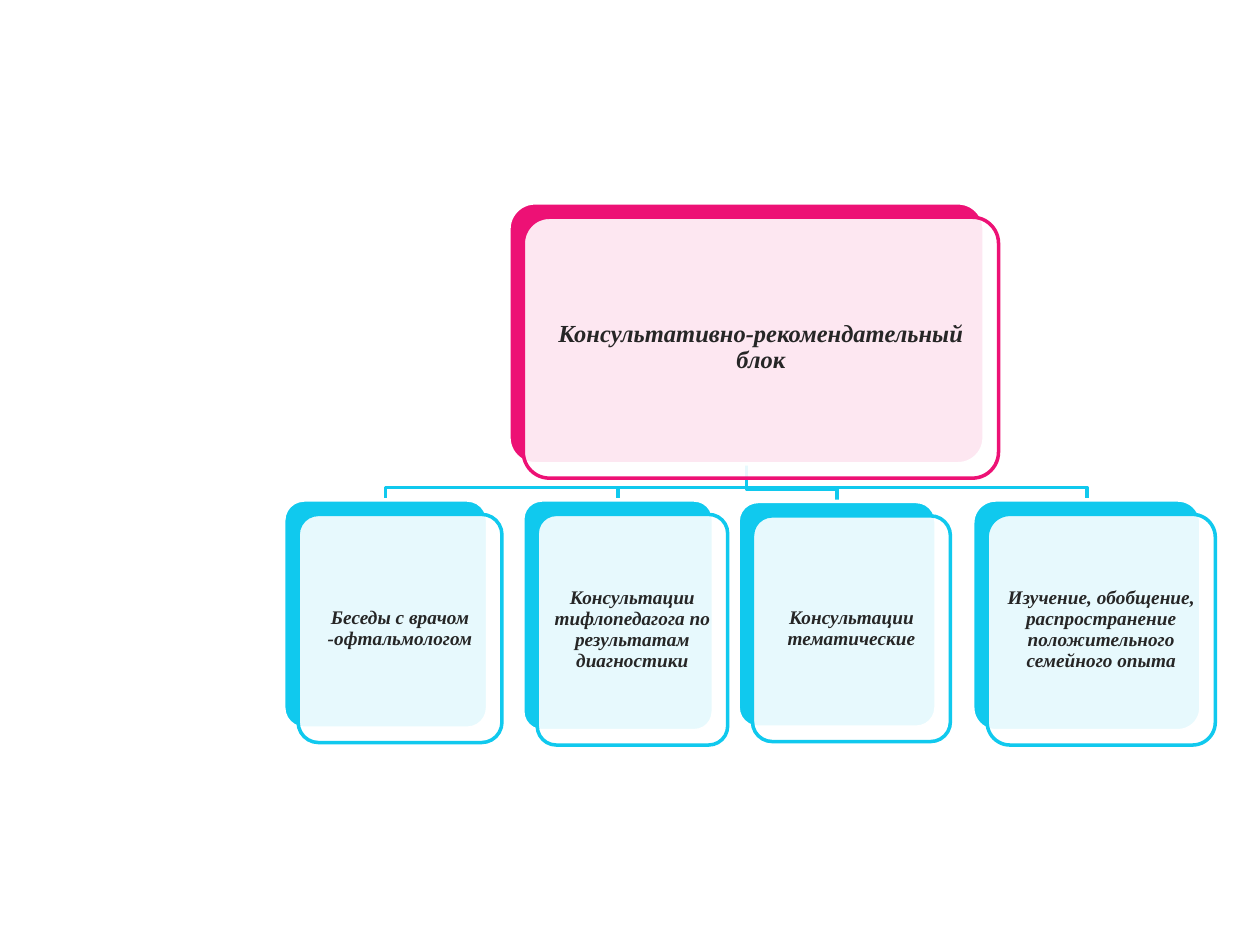
from dataclasses import dataclass

from lxml import etree
from pptx import Presentation
from pptx import util as u
from pptx.dml.color import RGBColor
from pptx.enum import shapes, text
from pptx.oxml import ns


@dataclass(frozen=True)
class Theme:
    root: str = "ED1175"
    child: str = "10C9EE"
    white: str = "FFFFFF"
    ink: str = "262626"
    font: str = "Times New Roman"
    root_size: int = 14
    child_size: int = 11
    line: int = 2
    opacity: int = 90
    corner: float = 0.1


@dataclass(frozen=True)
class Card:
    label: str
    left: float
    top: float
    width: float
    height: float

    @property
    def center(self):
        return self.left + self.width / 2


THEME = Theme()
OFFSET = 0.29  # shift of the front plate, cm
BRANCH = 0.25  # height of the last step of a branch, cm

ROOT = Card("Консультативно-рекомендательный блок", 10.26, 4.09, 9.58, 5.26)
CHILDREN = [
    Card("Беседы с врачом -офтальмологом", 5.72, 10.08, 4.11, 4.6),
    Card("Консультации тифлопедагога по результатам диагностики",
         10.54, 10.08, 3.84, 4.65),
    Card("Консультации тематические", 14.88, 10.11, 3.99, 4.55),
    Card("Изучение, обобщение, распространение положительного семейного опыта",
         19.61, 10.08, 4.6, 4.65),
]


def set_line(shape, color):
    shape.line.color.rgb = RGBColor.from_string(color)
    shape.line.width = u.Pt(THEME.line)
    shape.shadow.inherit = False


def add_plate(slide, card, shift, fill, line, opacity=100):
    shape = slide.shapes.add_shape(
        shapes.MSO_SHAPE.ROUNDED_RECTANGLE,
        u.Cm(card.left + shift), u.Cm(card.top + shift),
        u.Cm(card.width), u.Cm(card.height))
    shape.adjustments[0] = THEME.corner
    shape.fill.solid()
    shape.fill.fore_color.rgb = RGBColor.from_string(fill)
    if opacity < 100:
        color = shape.fill._xPr.find(".//" + ns.qn("a:srgbClr"))
        etree.SubElement(color, ns.qn("a:alpha"), val=str(opacity * 1000))
    set_line(shape, line)


def add_label(slide, card, size):
    inset = 0.03 * min(card.width, card.height)
    box = slide.shapes.add_textbox(
        u.Cm(card.left + OFFSET + inset), u.Cm(card.top + OFFSET + inset),
        u.Cm(card.width - 2 * inset), u.Cm(card.height - 2 * inset))
    frame = box.text_frame
    frame.word_wrap = True
    frame.vertical_anchor = text.MSO_ANCHOR.MIDDLE
    frame.margin_left = frame.margin_right = u.Cm(inset)
    frame.margin_top = frame.margin_bottom = u.Cm(inset)
    paragraph = frame.paragraphs[0]
    paragraph.alignment = text.PP_ALIGN.CENTER
    paragraph.line_spacing = 0.9
    run = paragraph.add_run()
    run.text = card.label
    run.font.name = THEME.font
    run.font.size = u.Pt(size)
    run.font.bold = run.font.italic = True
    run.font.color.rgb = RGBColor.from_string(THEME.ink)


def add_card(slide, card, color, size):
    add_plate(slide, card, 0, color, THEME.white)
    add_plate(slide, card, OFFSET, THEME.white, color, THEME.opacity)
    add_label(slide, card, size)


def add_branch(slide, parent, child):
    bend = child.top - BRANCH
    points = [(parent.center, parent.top + parent.height),
              (parent.center, bend), (child.center, bend),
              (child.center, child.top)]
    start, *rest = [(u.Cm(x), u.Cm(y)) for x, y in points]
    builder = slide.shapes.build_freeform(*start)
    builder.add_line_segments(rest, close=False)
    shape = builder.convert_to_shape()
    shape.fill.background()
    set_line(shape, THEME.child)


def main():
    presentation = Presentation()
    presentation.slide_width = u.Cm(25.4)
    presentation.slide_height = u.Cm(19.05)
    slide = presentation.slides.add_slide(presentation.slide_layouts[6])

    # Branches lie behind the cards
    for child in reversed(CHILDREN):
        add_branch(slide, ROOT, child)

    # Root card, then the row of child cards
    add_card(slide, ROOT, THEME.root, THEME.root_size)
    for child in CHILDREN:
        add_card(slide, child, THEME.child, THEME.child_size)

    presentation.save("out.pptx")


if __name__ == "__main__":
    main()
